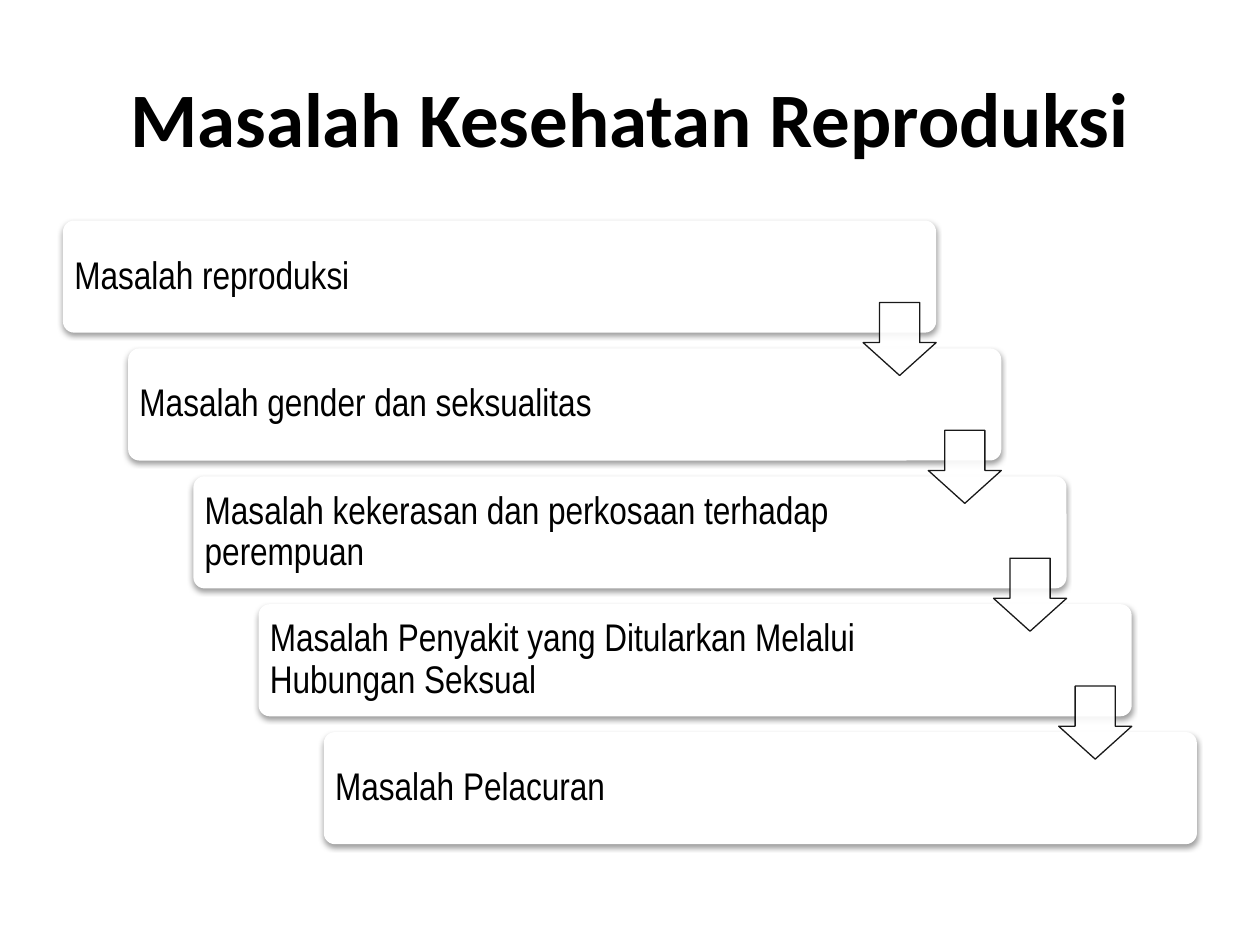
from collections import namedtuple
from dataclasses import dataclass

from lxml import etree
from pptx import Presentation
from pptx.dml.color import RGBColor
from pptx.enum.shapes import MSO_SHAPE
from pptx.enum.text import MSO_ANCHOR, PP_ALIGN
from pptx.oxml.ns import qn
from pptx.util import Inches, Pt

CARD_SHAPE = MSO_SHAPE.ROUNDED_RECTANGLE
ARROW_SHAPE = MSO_SHAPE.DOWN_ARROW
MIDDLE = MSO_ANCHOR.MIDDLE
LEFT, CENTER = PP_ALIGN.LEFT, PP_ALIGN.CENTER
TITLE_ONLY = 5

Box = namedtuple("Box", "left top width height")


@dataclass(frozen=True)
class Theme:
    """Colours, fonts and type sizes of the slide."""
    ink: RGBColor = RGBColor(0, 0, 0)
    paper: RGBColor = RGBColor(255, 255, 255)
    title_font: str = "Calibri"
    body_font: str = "Arial Narrow"
    title_size: int = 44
    body_size: int = 22
    outline: float = 0.75
    arrow_opacity: int = 90
    shadow_opacity: int = 38


THEME = Theme()
TITLE = "Masalah Kesehatan Reproduksi"
PROBLEMS = [
    "Masalah reproduksi",
    "Masalah gender dan seksualitas",
    "Masalah kekerasan dan perkosaan terhadap perempuan",
    "Masalah Penyakit yang Ditularkan Melalui Hubungan Seksual",
    "Masalah Pelacuran",
]


def write_text(frame, text, *, font, size, bold=False, align=LEFT, spacing=None):
    """Write one vertically centred paragraph into a text frame."""
    frame.word_wrap = True
    frame.vertical_anchor = MIDDLE
    para = frame.paragraphs[0]
    para.alignment = align
    para.line_spacing = spacing
    span = para.add_run()
    span.text = text
    span.font.name = font
    span.font.size = Pt(size)
    span.font.bold = bold
    span.font.color.rgb = THEME.ink


def set_opacity(color, percent):
    """Add an opacity to a colour element."""
    etree.SubElement(color, qn("a:alpha"), val=str(percent * 1000))


def add_shadow(shape):
    """Give a shape a soft shadow straight below it."""
    shape.shadow.inherit = False
    effects = shape._element.spPr.find(qn("a:effectLst"))
    shadow = etree.SubElement(
        effects, qn("a:outerShdw"), blurRad=str(Pt(3.1)), dist=str(Pt(1.6)),
        dir=str(90 * 60000), rotWithShape="0")
    color = etree.SubElement(shadow, qn("a:srgbClr"), val=str(THEME.ink))
    set_opacity(color, THEME.shadow_opacity)


def add_title(page, box):
    """Place and format the title placeholder."""
    title = page.shapes.title
    title.left, title.top, title.width, title.height = box
    write_text(title.text_frame, TITLE, font=THEME.title_font,
               size=THEME.title_size, bold=True, align=CENTER)


def add_card(page, box, text):
    """Draw one rounded card and its label, clear of the arrow's column."""
    card = page.shapes.add_shape(CARD_SHAPE, *box)
    card.adjustments[0] = 0.1
    card.fill.solid()
    card.fill.fore_color.rgb = THEME.paper
    card.line.fill.background()
    add_shadow(card)
    label = page.shapes.add_textbox(*box._replace(width=box.width - Inches(1.1)))
    frame = label.text_frame
    frame.margin_left = frame.margin_right = Inches(0.09)
    frame.margin_top = frame.margin_bottom = Inches(0.09)
    write_text(frame, text, font=THEME.body_font, size=THEME.body_size, spacing=0.9)


def add_arrow(page, box):
    """Draw one translucent arrow leading down to the next card."""
    arrow = page.shapes.add_shape(ARROW_SHAPE, *box)
    arrow.adjustments[0] = 0.55
    arrow.adjustments[1] = 0.45
    arrow.shadow.inherit = False
    arrow.fill.solid()
    arrow.fill.fore_color.rgb = THEME.paper
    arrow.line.color.rgb = THEME.ink
    arrow.line.width = Pt(THEME.outline)
    for color in arrow._element.spPr.iter(qn("a:srgbClr")):
        set_opacity(color, THEME.arrow_opacity)


def add_staircase(page, box, problems):
    """Step the cards from the top left to the bottom right of the box."""
    width, height, side = Inches(6.93), Inches(0.89), Inches(0.58)
    steps = len(problems) - 1
    across = (box.width - width) / steps
    down = (box.height - height) / steps
    cards = [Box(round(box.left + i * across), round(box.top + i * down), width, height)
             for i in range(len(problems))]
    for card, text in zip(cards, problems):
        add_card(page, card, text)
    for card in cards[:-1]:
        add_arrow(page, Box(card.left + width - side, card.top + Inches(0.65), side, side))


def main():
    """Build the deck and save it."""
    deck = Presentation()
    deck.slide_width, deck.slide_height = Inches(10), Inches(7.5)
    page = deck.slides.add_slide(deck.slide_layouts[TITLE_ONLY])
    add_title(page, Box(Inches(0.5), Inches(0.3), Inches(9), Inches(1.25)))
    add_staircase(page, Box(Inches(0.5), Inches(1.75), Inches(9), Inches(4.95)), PROBLEMS)
    deck.save("out.pptx")


if __name__ == "__main__":
    main()
